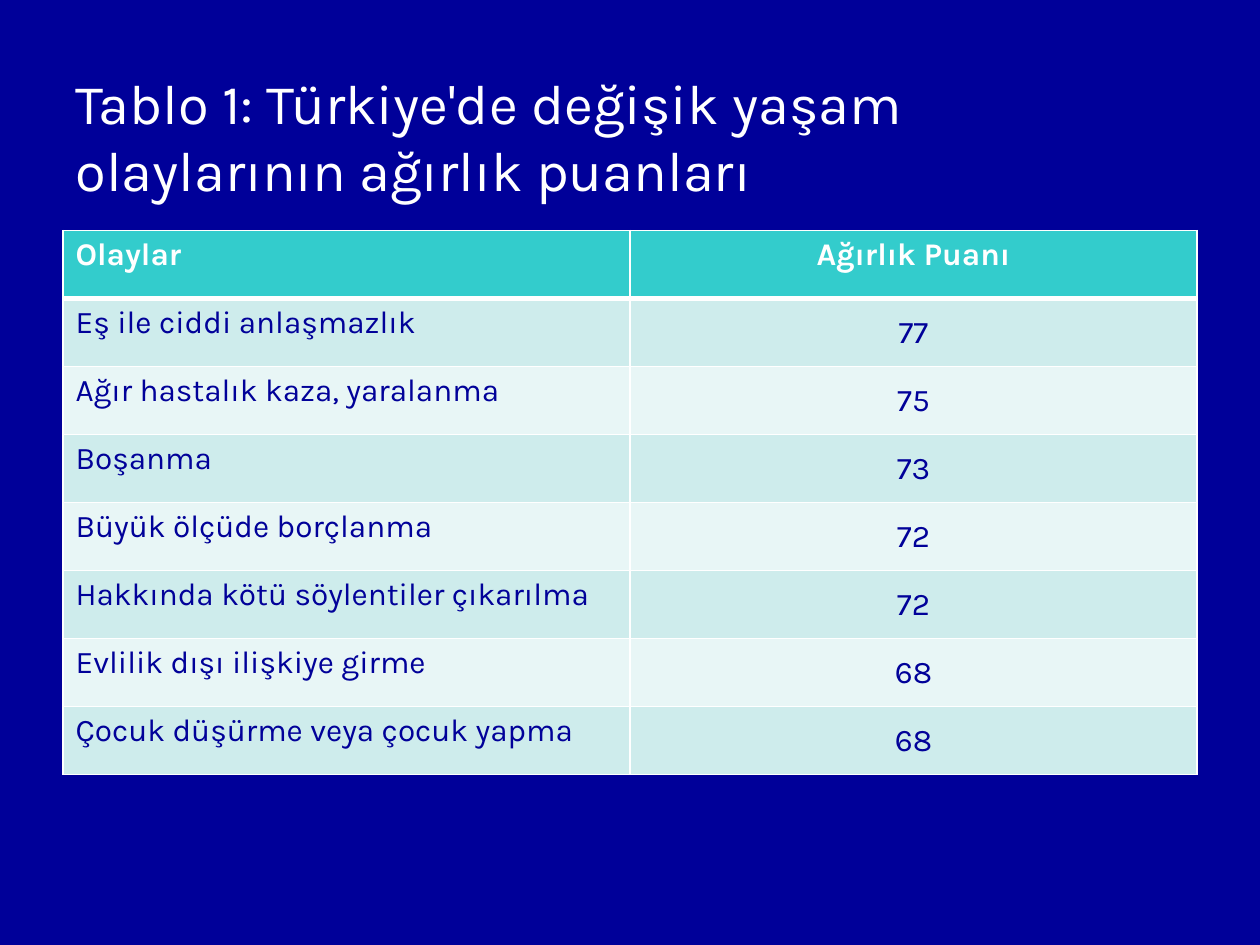
from dataclasses import dataclass
from lxml.etree import SubElement
from pptx import Presentation
from pptx.dml.color import RGBColor
from pptx.enum.text import MSO_ANCHOR, PP_ALIGN
from pptx.oxml.ns import qn
from pptx.util import Inches, Pt


@dataclass(frozen=True)
class Theme:
    font: str = "Karla"
    back: str = "000099"
    white: str = "FFFFFF"
    ink: str = "010199"
    head: str = "33CCCC"
    bands: tuple = ("CEECEC", "E8F6F6")
    title: int = 32
    body: int = 18
    thin: int = 1
    thick: int = 3


THEME = Theme()
WIDTH, HEIGHT = Inches(10), Inches(7.5)
LEFT, SPAN = 0.05, 0.9  # shares of the slide's width
TOP, ROW = Inches(1.83), Inches(0.54)

TITLE = "Tablo 1: Türkiye'de değişik yaşam olaylarının ağırlık puanları"
ROWS = [
    ("Olaylar", "Ağırlık Puanı"),
    ("Eş ile ciddi anlaşmazlık", "77"),
    ("Ağır hastalık kaza, yaralanma", "75"),
    ("Boşanma", "73"),
    ("Büyük ölçüde borçlanma", "72"),
    ("Hakkında kötü söylentiler çıkarılma", "72"),
    ("Evlilik dışı ilişkiye girme", "68"),
    ("Çocuk düşürme veya çocuk yapma", "68"),
]


def style(para, size, color, align, bold=False):
    font = para.font
    font.name, font.size, font.bold = THEME.font, Pt(size), bold
    font.color.rgb = RGBColor.from_string(color)
    para.alignment = align


def add_title(slide):
    title = slide.shapes.title
    title.left, title.width = int(WIDTH * LEFT), int(WIDTH * SPAN)
    title.top, title.height = Inches(0.32), Inches(1.51)
    frame = title.text_frame
    frame.text, frame.word_wrap = TITLE, True
    frame.vertical_anchor = MSO_ANCHOR.MIDDLE
    style(frame.paragraphs[0], THEME.title, THEME.white, PP_ALIGN.LEFT)


def set_edges(cell, **widths):
    """Draw white cell borders; they must come before the fill."""
    props = cell._tc.get_or_add_tcPr()
    for side, width in widths.items():
        line = SubElement(props, qn(f"a:ln{side}"), w=str(Pt(width)))
        fill = SubElement(line, qn("a:solidFill"))
        SubElement(fill, qn("a:srgbClr"), val=THEME.white)


def fill_cell(cell, text, row, col):
    head = row == 0
    thin, thick = THEME.thin, THEME.thick
    set_edges(cell, L=thin, R=thin, T=thick if row == 1 else thin,
              B=thick if head else thin)
    cell.fill.solid()
    color = THEME.head if head else THEME.bands[(row - 1) % 2]
    cell.fill.fore_color.rgb = RGBColor.from_string(color)
    cell.text = text
    # Scores sit in the middle, labels and headings at the top
    score = col == 1 and not head
    cell.vertical_anchor = MSO_ANCHOR.MIDDLE if score else MSO_ANCHOR.TOP
    style(cell.text_frame.paragraphs[0], THEME.body,
          THEME.white if head else THEME.ink,
          PP_ALIGN.CENTER if col else PP_ALIGN.LEFT, head)


def add_grid(slide):
    frame = slide.shapes.add_table(
        len(ROWS), len(ROWS[0]), int(WIDTH * LEFT), TOP,
        int(WIDTH * SPAN), ROW * len(ROWS))
    for r, texts in enumerate(ROWS):
        for c, text in enumerate(texts):
            fill_cell(frame.table.cell(r, c), text, r, c)


def main():
    deck = Presentation()
    deck.slide_width, deck.slide_height = WIDTH, HEIGHT
    slide = deck.slides.add_slide(deck.slide_layouts[5])  # title only
    back = slide.background.fill
    back.solid()
    back.fore_color.rgb = RGBColor.from_string(THEME.back)
    add_title(slide)
    add_grid(slide)
    deck.save("out.pptx")


if __name__ == "__main__":
    main()
